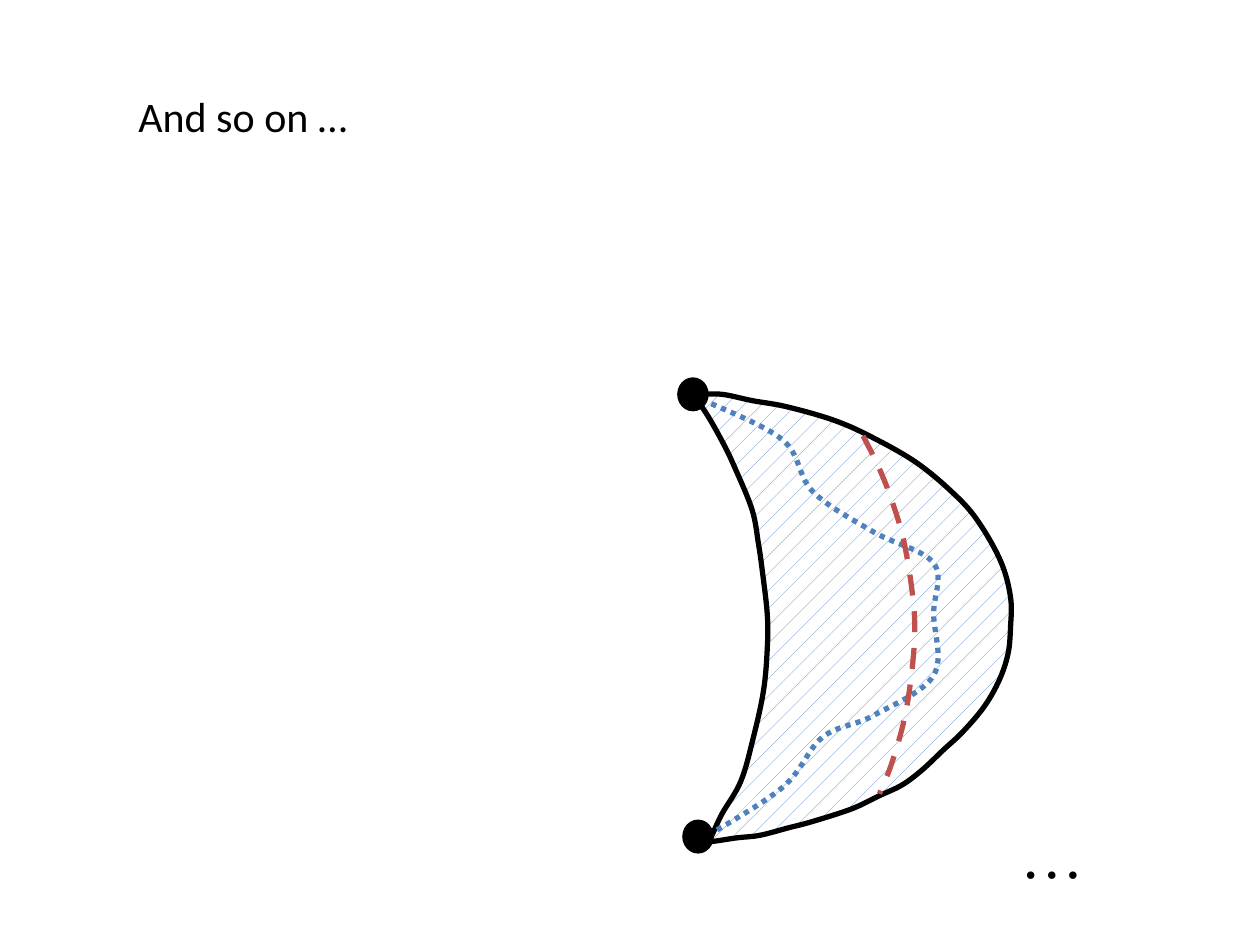
from lxml import etree
from pptx import Presentation
from pptx.dml.color import RGBColor
from pptx.enum.dml import MSO_LINE, MSO_PATTERN
from pptx.enum.shapes import MSO_SHAPE
from pptx.enum.text import MSO_AUTO_SIZE
from pptx.oxml.ns import qn
from pptx.util import Inches, Pt

COLORS = {"black": "000000", "white": "FFFFFF", "blue": "4F81BD", "red": "C0504D"}


def color(name):
    return RGBColor.from_string(COLORS[name])


def add_curve(page, knots, line_color, closed=False):
    """Draw a smooth curve through the knots, as one Bezier piece per gap."""
    corners = [(Inches(x), Inches(y)) for x, y in knots]
    if closed:
        corners.append(corners[0])
    builder = page.shapes.build_freeform(*corners[0])
    builder.add_line_segments(corners[1:], close=closed)
    curve = builder.convert_to_shape()
    curve.shadow.inherit = False
    curve.fill.background()
    curve.line.color.rgb = color(line_color)
    curve.line.width = Pt(3)

    local = [(x - curve.left, y - curve.top) for x, y in corners]
    before, after = (local[-2], local[1]) if closed else (local[0], local[-1])
    padded = [before, *local, after]
    pieces = curve._element.xpath(".//a:lnTo")
    for piece, a, b, c, d in zip(pieces, padded, padded[1:], padded[2:], padded[3:]):
        # Each handle is a sixth of the chord between the neighbouring knots
        leaving = [q + (r - p) / 6 for p, q, r in zip(a, b, c)]
        arriving = [r - (s - q) / 6 for q, r, s in zip(b, c, d)]
        bezier = etree.Element(qn("a:cubicBezTo"))
        for x, y in (leaving, arriving, c):
            etree.SubElement(bezier, qn("a:pt"), x=str(round(x)), y=str(round(y)))
        piece.getparent().replace(piece, bezier)
    return curve


deck = Presentation()
deck.slide_width, deck.slide_height = Inches(10), Inches(7.5)
page = deck.slides.add_slide(deck.slide_layouts[6])

# Hatched crescent
crescent_knots = [
    (5.73, 6.46), (5.65, 6.63), (5.62, 6.68), (5.85, 6.65), (6.03, 6.63),
    (6.26, 6.57), (6.45, 6.52), (6.76, 6.42), (6.97, 6.32), (7.16, 6.23),
    (7.32, 6.11), (7.49, 5.95), (7.64, 5.81), (7.81, 5.61), (7.93, 5.4),
    (8, 5.19), (8.02, 4.98), (8.02, 4.74), (7.94, 4.45), (7.75, 4.12),
    (7.55, 3.9), (7.27, 3.67), (6.94, 3.48), (6.63, 3.34), (6.25, 3.23),
    (5.97, 3.18), (5.73, 3.13), (5.53, 3.13), (5.44, 3.12), (5.57, 3.23),
    (5.73, 3.5), (5.84, 3.73), (5.97, 4.05), (6.02, 4.32), (6.05, 4.53),
    (6.09, 4.88), (6.09, 5.14), (6.06, 5.48), (5.98, 5.85), (5.88, 6.2),
]
crescent = add_curve(page, crescent_knots, "black", closed=True)
crescent.fill.patterned()
crescent.fill.pattern = MSO_PATTERN.PERCENT_5
crescent.fill.fore_color.rgb = color("blue")
crescent.fill.back_color.rgb = color("white")

# Texts
labels = [
    ("And so on …", (1, 0.67, 8.83, 0.5), {"name": "Calibri", "size": Pt(24)}),
    ("…", (8, 6.42, 1.25, 0.7), {"name": "Times New Roman", "size": Pt(36)}),
]
for text, place, font_format in labels:
    box = page.shapes.add_textbox(*(Inches(value) for value in place))
    box.text_frame.word_wrap = True
    box.text_frame.auto_size = MSO_AUTO_SIZE.SHAPE_TO_FIT_TEXT
    span = box.text_frame.paragraphs[0].add_run()
    span.text = text
    for key, value in font_format.items():
        setattr(span.font, key, value)
    span.font.color.rgb = color("black")

# Dotted path between the two end points, and dashed cut across the crescent
dotted_knots = [
    (5.57, 3.17), (6.21, 3.49), (6.45, 3.9), (6.93, 4.22), (7.41, 4.47),
    (7.41, 4.87), (7.41, 5.36), (6.93, 5.68), (6.53, 5.85), (6.21, 6.25),
    (5.57, 6.66),
]
dashed_knots = [
    (6.85, 3.46), (6.97, 3.7), (7.07, 3.95), (7.17, 4.28), (7.24, 4.7),
    (7.26, 5.02), (7.23, 5.39), (7.17, 5.74), (7.07, 6.08), (6.98, 6.3),
]
for knots, line_color, dash in [(dotted_knots, "blue", MSO_LINE.ROUND_DOT),
                                (dashed_knots, "red", MSO_LINE.DASH)]:
    add_curve(page, knots, line_color).line.dash_style = dash

# End points
for left, top in [(5.38, 3), (5.42, 6.51)]:
    dot = page.shapes.add_shape(MSO_SHAPE.OVAL, Inches(left), Inches(top),
                                Inches(0.24), Inches(0.26))
    dot.shadow.inherit = False
    dot.fill.solid()
    dot.fill.fore_color.rgb = color("black")
    dot.line.color.rgb = color("black")
    dot.line.width = Pt(0.75)

deck.save("out.pptx")
